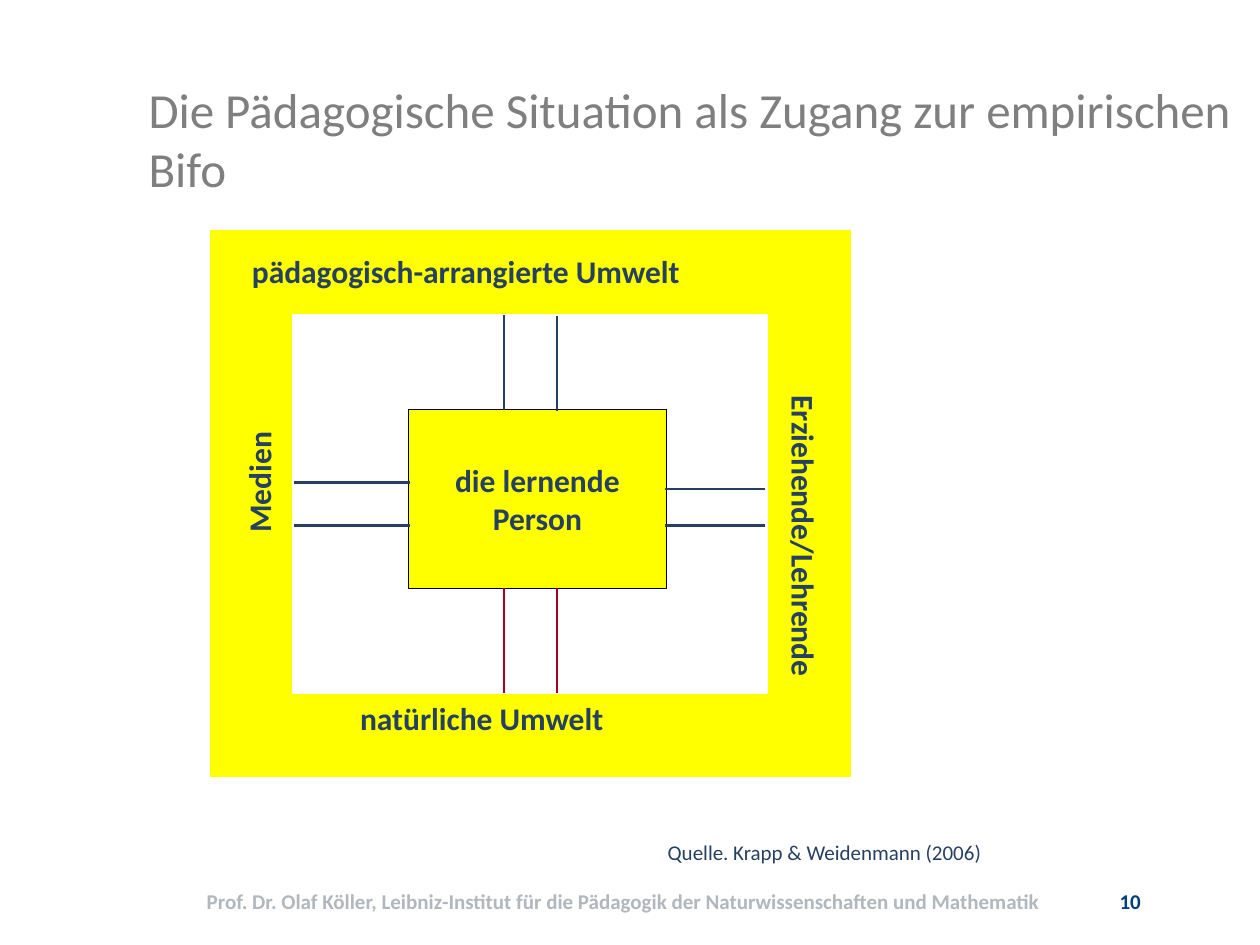
from dataclasses import dataclass
from typing import Optional

from lxml.etree import SubElement
from pptx import Presentation
from pptx.dml.color import RGBColor
from pptx.enum.shapes import MSO_CONNECTOR, MSO_SHAPE
from pptx.enum.text import MSO_ANCHOR, MSO_AUTO_SIZE, PP_ALIGN
from pptx.oxml.ns import qn
from pptx.util import Cm, Pt


@dataclass(frozen=True)
class Theme:
    font: str = "Calibri"
    head: str = "7F7F7F"
    ink: str = "254061"
    red: str = "A50021"
    foot: str = "B0B7BD"
    page: str = "003F7D"
    sun: str = "FFFF00"
    white: str = "FFFFFF"
    black: str = "000000"
    large: int = 28
    mid: int = 18
    small: int = 12


THEME = Theme()


@dataclass(frozen=True)
class Box:
    x: float
    y: float
    w: float
    h: float

    def cm(self) -> tuple:
        return Cm(self.x), Cm(self.y), Cm(self.w), Cm(self.h)


@dataclass(frozen=True)
class Panel:
    box: Box
    fill: str
    edge: str
    width: float = 0.75
    lines: tuple = ()


@dataclass(frozen=True)
class Label:
    text: str
    box: Box
    turn: float = 0
    size: int = THEME.mid
    tint: str = THEME.ink
    bold: bool = True
    mid: bool = False


@dataclass(frozen=True)
class Link:
    x1: float
    y1: float
    x2: float
    y2: float
    tint: str = THEME.ink


def write(frame, lines: tuple, size: int, tint: str, bold: bool = False,
          align: Optional[PP_ALIGN] = PP_ALIGN.LEFT,
          anchor: MSO_ANCHOR = MSO_ANCHOR.TOP) -> None:
    frame.word_wrap = True
    frame.auto_size = MSO_AUTO_SIZE.NONE
    frame.vertical_anchor = anchor
    for i, line in enumerate(lines):
        para = frame.add_paragraph() if i else frame.paragraphs[0]
        para.alignment = align
        run = para.add_run()
        run.text = line
        run.font.name = THEME.font
        run.font.size = Pt(size)
        run.font.bold = bold
        run.font.color.rgb = RGBColor.from_string(tint)


def draw_panel(slide, panel: Panel) -> None:
    shape = slide.shapes.add_shape(MSO_SHAPE.RECTANGLE, *panel.box.cm())
    shape.shadow.inherit = False
    shape.fill.solid()
    shape.fill.fore_color.rgb = RGBColor.from_string(panel.fill)
    shape.line.color.rgb = RGBColor.from_string(panel.edge)
    shape.line.width = Pt(panel.width)
    if panel.lines:
        write(shape.text_frame, panel.lines, THEME.mid, THEME.ink, True,
              PP_ALIGN.CENTER, MSO_ANCHOR.MIDDLE)


def draw_label(slide, label: Label) -> None:
    shape = slide.shapes.add_textbox(*label.box.cm())
    shape.rotation = label.turn
    align = PP_ALIGN.CENTER if label.mid else PP_ALIGN.LEFT
    anchor = MSO_ANCHOR.MIDDLE if label.mid else MSO_ANCHOR.TOP
    write(shape.text_frame, (label.text,), label.size, label.tint,
          label.bold, align, anchor)


def draw_link(slide, link: Link) -> None:
    line = slide.shapes.add_connector(
        MSO_CONNECTOR.STRAIGHT,
        Cm(link.x1), Cm(link.y1), Cm(link.x2), Cm(link.y2))
    line.line.color.rgb = RGBColor.from_string(link.tint)
    line.line.width = Pt(1.5)
    SubElement(line._element.spPr, qn("a:effectLst"))


PANELS = (
    Panel(Box(4.24, 4.65, 12.9, 11), THEME.sun, THEME.sun),
    Panel(Box(5.92, 6.35, 9.53, 7.62), THEME.white, THEME.white, 1.5),
    Panel(Box(8.23, 8.26, 5.21, 3.61), THEME.sun, THEME.black,
          lines=("die lernende", "Person")),
)
LINKS = (
    Link(10.16, 8.26, 10.16, 6.35),
    Link(11.23, 8.28, 11.23, 6.38),
    *(Link(x, 13.97, x, 11.86, THEME.red) for x in (10.16, 11.23)),
    *(Link(8.26, y, 5.92, y) for y in (9.73, 10.59)),
    *(Link(13.41, y, 15.42, y) for y in (9.86, 10.59)),
)
LABELS = (
    Label("pädagogisch-arrangierte Umwelt", Box(4.83, 4.95, 10.49, 1.02)),
    Label("natürliche Umwelt", Box(7.01, 13.97, 6.12, 1.02)),
    Label("Medien", Box(3.81, 9.07, 2.82, 1.02), 270.2),
    Label("Erziehende/Lehrende", Box(12.8, 10.62, 6.81, 1.02), 90),
    Label("Quelle. Krapp & Weidenmann (2006)", Box(13.21, 16.79, 9.22, 0.76),
          size=THEME.small, bold=False),
    Label("Prof. Dr. Olaf Köller, Leibniz-Institut für die Pädagogik der "
          "Naturwissenschaften und Mathematik", Box(2.92, 17.65, 19.3, 1.02),
          size=THEME.small, tint=THEME.foot, mid=True),
    Label("10", Box(22.2, 17.65, 1.17, 1.02),
          size=THEME.small, tint=THEME.page, mid=True),
)


def main() -> None:
    deck = Presentation()
    deck.slide_width, deck.slide_height = Cm(25.4), Cm(19.05)
    slide = deck.slides.add_slide(deck.slide_layouts[5])
    title = slide.shapes.title
    title.left, title.top, title.width, title.height = Box(
        2.74, 1.47, 22.66, 2.64).cm()
    write(title.text_frame,
          ("Die Pädagogische Situation als Zugang zur empirischen Bifo",),
          THEME.large, THEME.head)
    for panel in PANELS:
        draw_panel(slide, panel)
    for link in LINKS:
        draw_link(slide, link)
    for label in LABELS:
        draw_label(slide, label)
    deck.save("out.pptx")


if __name__ == "__main__":
    main()
